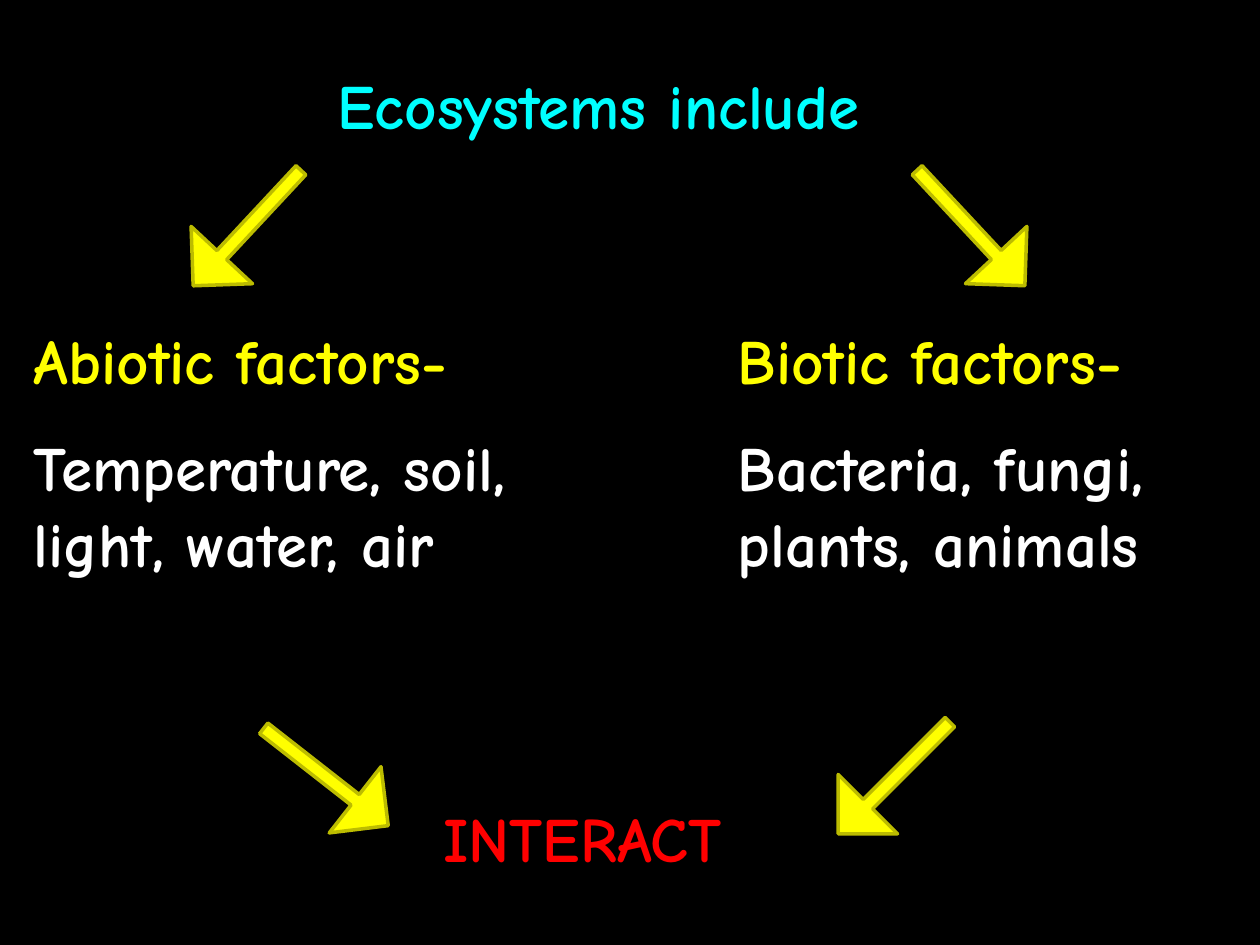
from lxml import etree
from pptx import Presentation
from pptx import util as u
from pptx.dml.color import RGBColor
from pptx.enum import shapes, text
from pptx.oxml import ns

EMU_PER_PX = 914400 / 126
COLORS = {
    "background": "000000",
    "title": "00FFFF",
    "heading": "FFFF00",
    "examples": "FFFFFF",
    "result": "FF0000",
    "arrow": "FFFF00",
    "arrow_edge": "BCBC00",
}


def px(value):
    return u.Emu(round(value * EMU_PER_PX))


def color(name):
    return RGBColor.from_string(COLORS[name])


class SlideBuilder:
    font_name = "Comic Neue"
    font_size = u.Pt(36)
    paragraph_gap = u.Pt(18)
    arrow_size = (158, 84)

    def __init__(self, slide):
        self.slide = slide
        background = slide.background.fill
        background.solid()
        background.fore_color.rgb = color("background")

    def place(self, shape, box):
        shape.left, shape.top, shape.width, shape.height = map(px, box)

    def set_lines(self, shape, lines):
        frame = shape.text_frame
        frame.text = "\n".join(line for line, _ in lines)
        frame.word_wrap = True
        frame.auto_size = text.MSO_AUTO_SIZE.NONE
        frame.vertical_anchor = text.MSO_ANCHOR.TOP
        for index, (paragraph, (_, color_name)) in enumerate(zip(frame.paragraphs, lines)):
            paragraph.alignment = text.PP_ALIGN.LEFT
            paragraph.space_before = self.paragraph_gap if index else u.Pt(0)
            for run in paragraph.runs:
                run.font.name = self.font_name
                run.font.size = self.font_size
                run.font.bold = True
                run.font.color.rgb = color(color_name)

    def title(self, box, line):
        shape = self.slide.shapes.title
        self.place(shape, box)
        self.set_lines(shape, [(line, "title")])

    def factors(self, index, box, heading, examples):
        shape = self.slide.placeholders[index]
        self.place(shape, box)
        self.set_lines(shape, [(heading, "heading"), (examples, "examples")])
        for paragraph in shape.text_frame.paragraphs:
            properties = paragraph._p.get_or_add_pPr()
            properties.set("marL", "0")
            properties.set("indent", "0")
            etree.SubElement(properties, ns.qn("a:buNone"))

    def label(self, box, line, color_name):
        shape = self.slide.shapes.add_textbox(*map(px, box))
        self.set_lines(shape, [(line, color_name)])

    def arrow(self, left, top, rotation):
        box = (left, top, *self.arrow_size)
        shape = self.slide.shapes.add_shape(shapes.MSO_SHAPE.RIGHT_ARROW, *map(px, box))
        shape.rotation = rotation
        shape.adjustments[0] = 0.16
        shape.adjustments[1] = 0.5
        shape.shadow.inherit = False
        shape.fill.solid()
        shape.fill.fore_color.rgb = color("arrow")
        shape.line.color.rgb = color("arrow_edge")
        shape.line.width = u.Pt(2)


def main():
    presentation = Presentation()
    presentation.slide_width = u.Inches(10)
    presentation.slide_height = u.Inches(7.5)
    slide = presentation.slides.add_slide(presentation.slide_layouts[3])
    builder = SlideBuilder(slide)

    builder.title((325, 60, 640, 90), "Ecosystems include")
    builder.factors(1, (21, 315, 557, 357), "Abiotic factors-", "Temperature, soil, light, water, air")
    builder.factors(2, (725, 315, 504, 357), "Biotic factors-", "Bacteria, fungi, plants, animals")
    builder.label((431, 793, 378, 90), "INTERACT", "result")

    for left, top, rotation in [(168, 186, 133), (247, 735, 38), (815, 736, 135), (892, 186, 47)]:
        builder.arrow(left, top, rotation)

    presentation.save("out.pptx")


if __name__ == "__main__":
    main()
